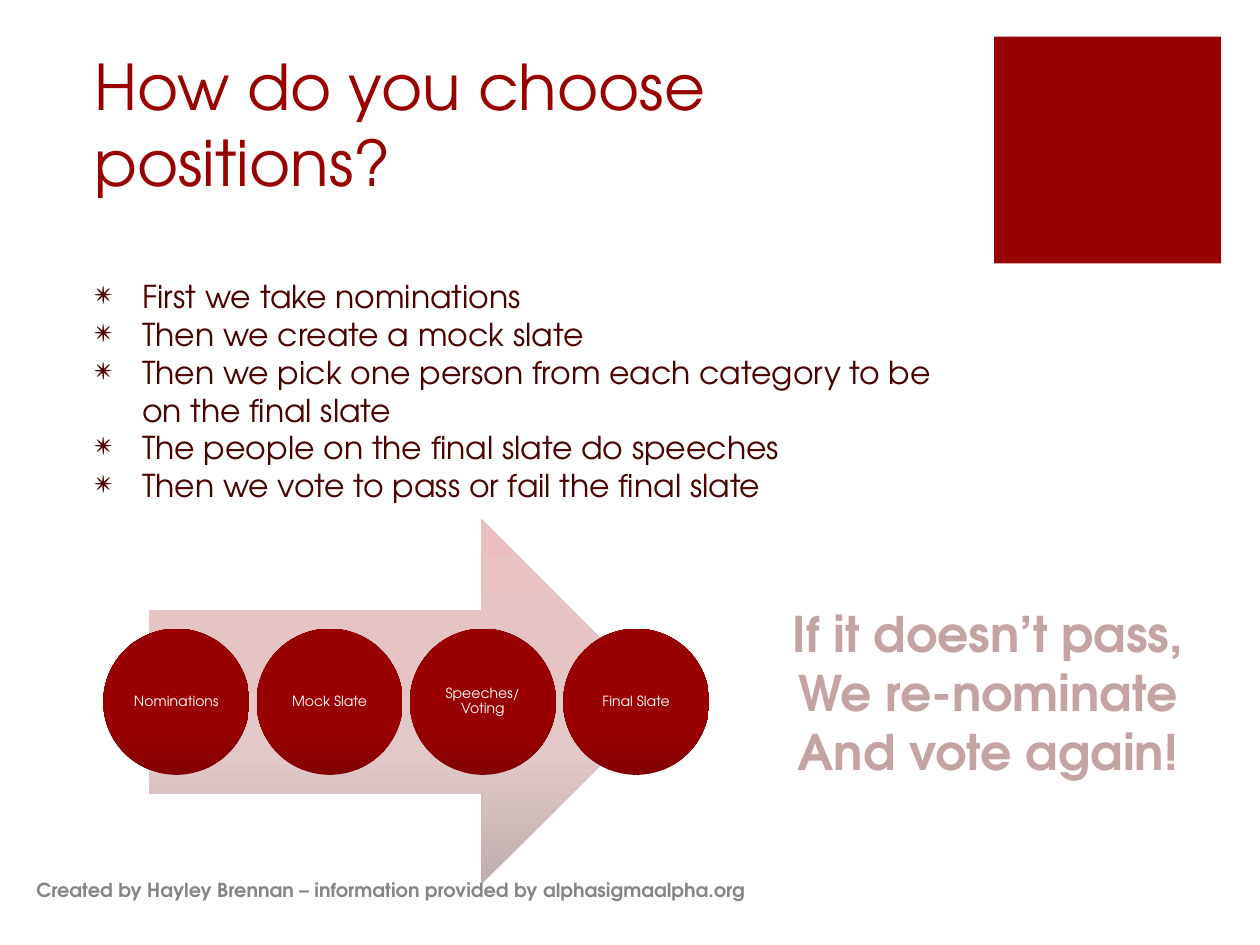
from dataclasses import dataclass

from lxml import etree
from pptx import Presentation
from pptx import util as u
from pptx.dml.color import RGBColor
from pptx.enum import shapes, text
from pptx.oxml.ns import qn

COLUMNS, ROWS = 1000, 750
CELL = u.Inches(10) // COLUMNS


@dataclass(frozen=True)
class Theme:
    font: str = "TeX Gyre Adventor"
    red: str = "990000"
    body: str = "4C0000"
    callout: str = "C4A3A3"
    footer: str = "858585"
    white: str = "FFFFFF"
    arrow_stops: tuple = ((0, "BFADAD"), (35, "E2C8C8"), (70, "E6C4C4"), (100, "EBBFBF"))
    circle_stops: tuple = ((0, "830000"), (35, "990000"), (100, "990000"))
    title_size: int = 36
    callout_size: int = 28
    body_size: int = 18
    footer_size: int = 11
    label_size: int = 8


THEME = Theme()


@dataclass(frozen=True)
class Box:
    """A region in columns and rows of the slide grid."""
    left: float
    top: float
    width: float
    height: float

    def emu(self):
        return [round(n * CELL) for n in (self.left, self.top, self.width, self.height)]


def fill_gradient(shape, stops):
    """Fill from the bottom edge to the top edge."""
    shape.fill.gradient()
    shape.fill.gradient_angle = 90
    stop_list = shape._element.spPr.find(qn("a:gradFill")).find(qn("a:gsLst"))
    for stop in list(stop_list):
        stop_list.remove(stop)
    for position, color in stops:
        stop = etree.SubElement(stop_list, qn("a:gs"), pos=str(position * 1000))
        etree.SubElement(stop, qn("a:srgbClr"), val=color)


def add_plain_shape(parent, kind, box):
    shape = parent.shapes.add_shape(kind, *box.emu())
    shape.shadow.inherit = False
    shape.line.fill.background()
    return shape


def write(frame, lines, size, color, bold=False,
          align=text.PP_ALIGN.LEFT, anchor=text.MSO_ANCHOR.TOP):
    frame.word_wrap = True
    frame.vertical_anchor = anchor
    frame.text = "\n".join(lines)
    for paragraph in frame.paragraphs:
        paragraph.alignment = align
        for run in paragraph.runs:
            run.font.name = THEME.font
            run.font.size = u.Pt(size)
            run.font.bold = bold
            run.font.color.rgb = RGBColor.from_string(color)


def add_text(slide, box, *args, **options):
    frame = slide.shapes.add_textbox(*box.emu()).text_frame
    write(frame, *args, **options)
    return frame


def add_header(slide, box):
    side = 180
    square = add_plain_shape(slide, shapes.MSO_SHAPE.RECTANGLE,
                             Box(box.left + box.width - side, box.top, side, side))
    square.fill.solid()
    square.fill.fore_color.rgb = RGBColor.from_string(THEME.red)
    add_text(slide, Box(box.left, box.top + 9, 712, 125), ["How do you choose positions?"],
             THEME.title_size, THEME.red, anchor=text.MSO_ANCHOR.BOTTOM)


def add_steps(slide, box):
    frame = add_text(slide, box, [
        "First we take nominations",
        "Then we create a mock slate",
        "Then we pick one person from each category to be on the final slate",
        "The people on the final slate do speeches",
        "Then we vote to pass or fail the final slate",
    ], THEME.body_size, THEME.body)
    indent = u.Inches(0.38)
    for paragraph in frame.paragraphs:
        properties = paragraph._p.get_or_add_pPr()
        properties.set("marL", str(indent))
        properties.set("indent", str(-indent))
        etree.SubElement(properties, qn("a:buChar"), char="✴")


def add_process(slide, box, labels):
    """Circles spread evenly across the box, over an arrow 85% of its width."""
    group = slide.shapes.add_group_shape()
    arrow_width = box.width * 0.85
    arrow = add_plain_shape(group, shapes.MSO_SHAPE.RIGHT_ARROW,
                            Box(box.left + (box.width - arrow_width) / 2, box.top,
                                arrow_width, box.height))
    fill_gradient(arrow, THEME.arrow_stops)

    diameter = box.height * 0.4
    step = (box.width - diameter) / (len(labels) - 1)
    for index, label in enumerate(labels):
        circle = add_plain_shape(group, shapes.MSO_SHAPE.OVAL,
                                 Box(box.left + index * step,
                                     box.top + (box.height - diameter) / 2,
                                     diameter, diameter))
        fill_gradient(circle, THEME.circle_stops)
        frame = circle.text_frame
        frame.margin_left = frame.margin_right = u.Inches(0.03)
        frame.margin_top = frame.margin_bottom = u.Inches(0.03)
        write(frame, [label], THEME.label_size, THEME.white,
              align=text.PP_ALIGN.CENTER, anchor=text.MSO_ANCHOR.MIDDLE)
        frame.paragraphs[0].line_spacing = 0.9


def add_callout(slide, box):
    add_text(slide, box, ["If it doesn’t pass,", "We re-nominate", "And vote again!"],
             THEME.callout_size, THEME.callout, bold=True, align=text.PP_ALIGN.CENTER)


def add_footer(slide, box):
    frame = add_text(slide, box,
                     ["Created by Hayley Brennan – information provided by alphasigmaalpha.org"],
                     THEME.footer_size, THEME.footer, bold=True)
    frame.margin_top = u.Inches(0.02)


def main():
    presentation = Presentation()
    presentation.slide_width = COLUMNS * CELL
    presentation.slide_height = ROWS * CELL
    slide = presentation.slides.add_slide(presentation.slide_layouts[6])
    add_header(slide, Box(65, 29, 904, 180))
    add_process(slide, Box(82, 412, 481, 290),
                ["Nominations", "Mock Slate", "Speeches/Voting", "Final Slate"])
    add_steps(slide, Box(65, 215, 698, 192))
    add_footer(slide, Box(19, 695, 657, 40))
    add_callout(slide, Box(568, 474, 432, 151))
    presentation.save("out.pptx")


if __name__ == "__main__":
    main()
